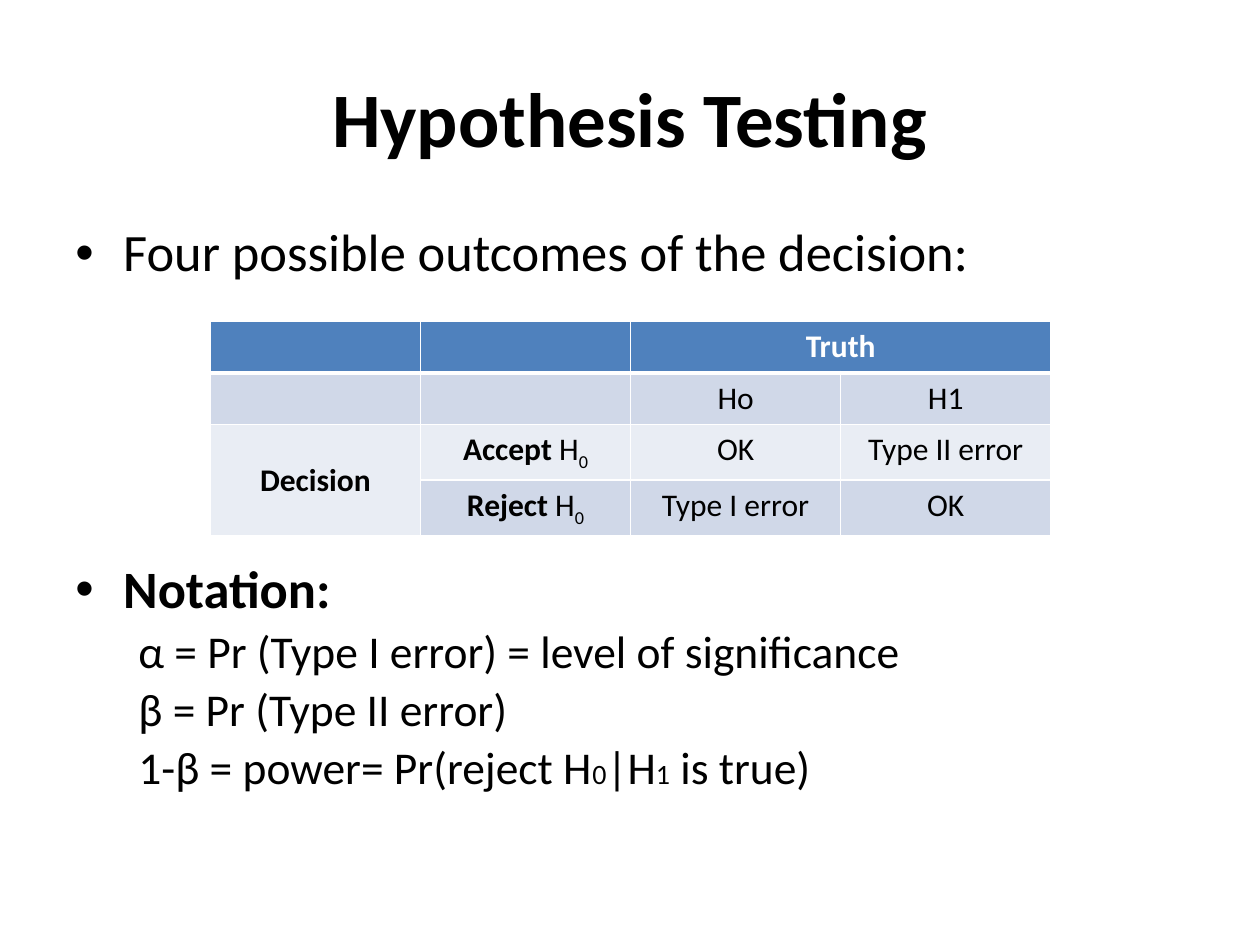
from lxml import etree
from pptx import Presentation
from pptx.dml.color import RGBColor
from pptx.enum.text import MSO_ANCHOR, PP_ALIGN
from pptx.oxml.ns import qn
from pptx.util import Inches, Pt

CENTER = PP_ALIGN.CENTER
MIDDLE = MSO_ANCHOR.MIDDLE
TOP = MSO_ANCHOR.TOP

BLACK = RGBColor(0x00, 0x00, 0x00)
WHITE = RGBColor(0xFF, 0xFF, 0xFF)
HEADER_BLUE = RGBColor(0x4F, 0x81, 0xBD)
BAND_DARK = RGBColor(0xD0, 0xD8, 0xE8)
BAND_LIGHT = RGBColor(0xE9, 0xED, 0xF4)
ROW_FILLS = [HEADER_BLUE, BAND_DARK, BAND_LIGHT, BAND_DARK]
ROW_HEIGHTS = [0.41, 0.41, 0.43, 0.43]

NOTATION = [
    [("α = Pr (Type I error) = level of significance", 26)],
    [("β = Pr (Type II error)", 26)],
    [("1-β = power= Pr(reject H", 26), ("0", 16), ("|H", 26),
     ("1", 16), (" is true)", 26)],
]
OUTCOMES = [
    ["", "", "Truth", ""],
    ["", "", "Ho", "H1"],
    ["Decision", "Accept ", "OK", "Type II error"],
    ["", "Reject ", "Type I error", "OK"],
]


def set_font(font, size, color=BLACK, bold=False):
    font.name = "Calibri"
    font.size = Pt(size)
    font.color.rgb = color
    font.bold = bold


def add_title(slide, left, top, width, height):
    title = slide.shapes.title
    title.left, title.top = Inches(left), Inches(top)
    title.width, title.height = Inches(width), Inches(height)
    title.text_frame.text = "Hypothesis Testing"
    title.text_frame.vertical_anchor = MIDDLE
    heading = title.text_frame.paragraphs[0]
    heading.alignment = CENTER
    set_font(heading.font, 44, bold=True)


def add_bullet_box(slide, left, top, width, height, text, bold=False):
    box = slide.shapes.add_textbox(Inches(left), Inches(top), Inches(width), Inches(height))
    frame = box.text_frame
    frame.word_wrap = True
    bullet = frame.paragraphs[0]
    bullet.text = text
    bullet.line_spacing = 0.9
    properties = bullet._p.get_or_add_pPr()
    properties.set("marL", str(Inches(0.38)))
    properties.set("indent", str(-Inches(0.38)))
    etree.SubElement(properties, qn("a:buFont")).set("typeface", "Arial")
    etree.SubElement(properties, qn("a:buChar")).set("char", "•")
    set_font(bullet.font, 30, bold=bold)
    return frame


def add_notation(slide, left, top, width, height):
    frame = add_bullet_box(slide, left, top, width, height, "Notation:", bold=True)
    for parts in NOTATION:
        definition = frame.add_paragraph()
        definition.line_spacing = 0.9
        definition.space_before = Pt(5.2)
        definition._p.get_or_add_pPr().set("marL", str(Inches(0.5)))
        set_font(definition.font, 26)
        for text, size in parts:
            run = definition.add_run()
            run.text = text
            set_font(run.font, size)


def set_borders(cell, top_width, bottom_width):
    properties = cell._tc.get_or_add_tcPr()
    for side, width in (("L", 1), ("R", 1), ("T", top_width), ("B", bottom_width)):
        line = etree.SubElement(properties, qn(f"a:ln{side}"), w=str(Pt(width)))
        fill = etree.SubElement(line, qn("a:solidFill"))
        etree.SubElement(fill, qn("a:srgbClr"), val=str(WHITE))


def fill_cell(cell, row, column, text):
    set_borders(cell, 3 if row == 1 else 1, 3 if row == 0 else 1)
    cell.fill.solid()
    cell.fill.fore_color.rgb = ROW_FILLS[row]
    cell.vertical_anchor = MIDDLE if text == "Decision" else TOP
    label = cell.text_frame.paragraphs[0]
    label.alignment = CENTER
    color = WHITE if row == 0 else BLACK
    set_font(label.font, 18, color, row == 0)
    if not text:
        return
    parts = [(text, row == 0 or column < 2)]
    if column == 1:
        parts += [("H", False), ("0", False)]
    for part, bold in parts:
        run = label.add_run()
        run.text = part
        set_font(run.font, 18, color, bold)
        if part == "0":
            run._r.get_or_add_rPr().set("baseline", "-25000")


def add_outcome_table(slide, left, top, width):
    table = slide.shapes.add_table(
        len(OUTCOMES), len(OUTCOMES[0]), Inches(left), Inches(top),
        Inches(width), Inches(sum(ROW_HEIGHTS))).table
    for row, texts in enumerate(OUTCOMES):
        table.rows[row].height = Inches(ROW_HEIGHTS[row])
        for column, text in enumerate(texts):
            fill_cell(table.cell(row, column), row, column, text)
    table.cell(0, 2).merge(table.cell(0, 3))
    table.cell(2, 0).merge(table.cell(3, 0))


def main():
    presentation = Presentation()
    presentation.slide_width, presentation.slide_height = Inches(10), Inches(7.5)
    slide = presentation.slides.add_slide(presentation.slide_layouts[5])
    add_title(slide, 0.5, 0.3, 9, 1.25)
    add_bullet_box(slide, 0.5, 1.75, 9, 0.6, "Four possible outcomes of the decision:")
    add_notation(slide, 0.5, 4.42, 9, 2.28)
    add_outcome_table(slide, 1.67, 2.55, 6.67)
    presentation.save("out.pptx")


if __name__ == "__main__":
    main()
